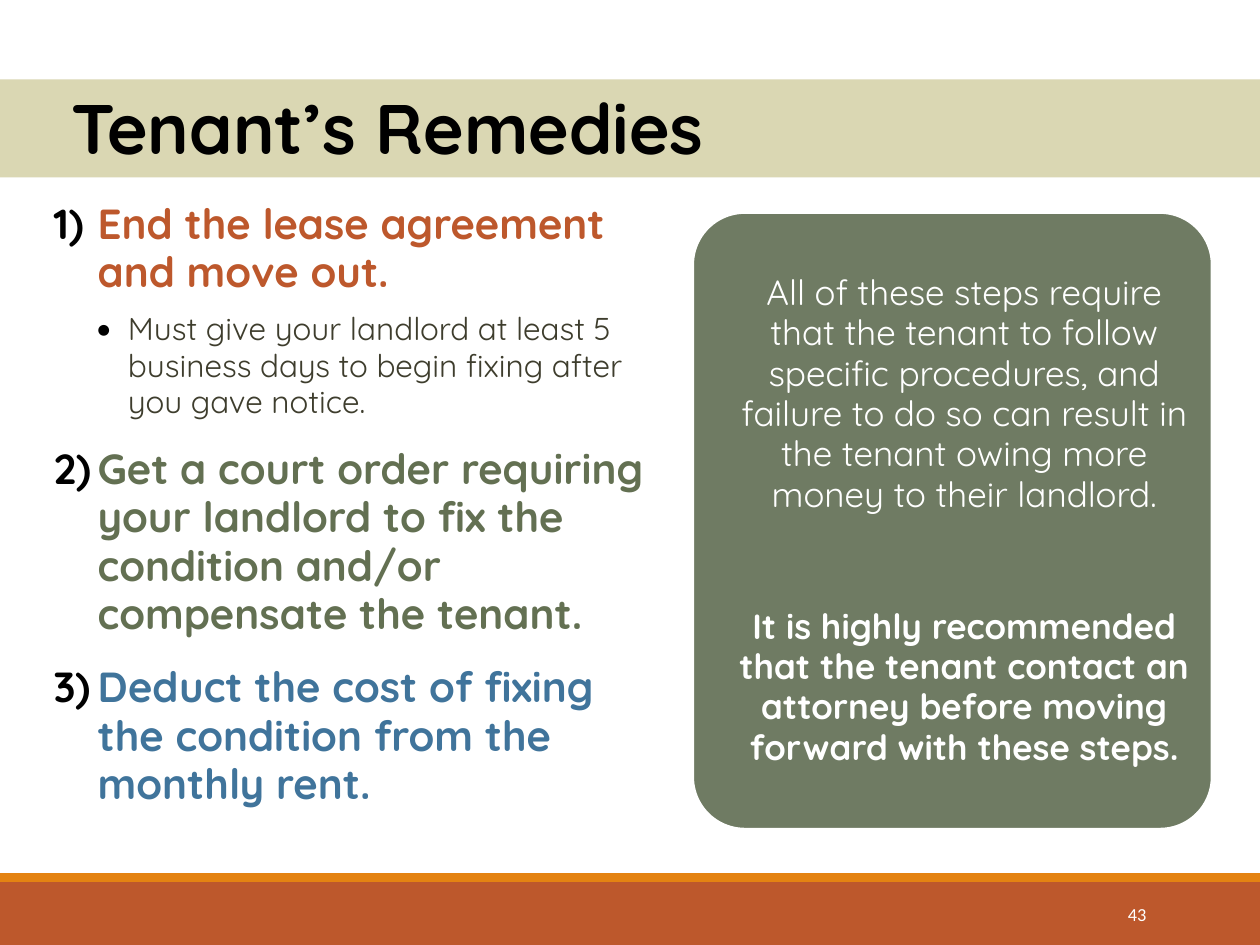
from lxml import etree
from pptx import Presentation
from pptx.dml.color import RGBColor
from pptx.enum.shapes import MSO_SHAPE
from pptx.enum.text import MSO_ANCHOR, PP_ALIGN
from pptx.oxml.ns import qn
from pptx.util import Cm, Pt

RECT, ROUNDED = MSO_SHAPE.RECTANGLE, MSO_SHAPE.ROUNDED_RECTANGLE
TOP, MIDDLE, BOTTOM = MSO_ANCHOR.TOP, MSO_ANCHOR.MIDDLE, MSO_ANCHOR.BOTTOM
LEFT, CENTER, RIGHT = PP_ALIGN.LEFT, PP_ALIGN.CENTER, PP_ALIGN.RIGHT

COLORS = {
    "black": "000000", "white": "FFFFFF", "sand": "DAD7B3", "rust": "BD582C",
    "orange": "E48312", "olive": "637052", "blue": "40749B",
    "sage": "6F7B63", "ink": "3E3D2D",
}
FONT = "Quicksand"
LINE_SPACING = 0.96

REMEDIES = [
    ("End the lease agreement and move out.", "rust",
     ["Must give your landlord at least 5 business days to begin fixing after you gave notice."]),
    ("Get a court order requiring your landlord to fix the condition and/or "
     "compensate the tenant.", "olive", []),
    ("Deduct the cost of fixing the condition from the monthly rent.", "blue", []),
]
ADVICE = [
    ("All of these steps require that the tenant to follow specific procedures, and "
     "failure to do so can result in the tenant owing more money to their landlord.", False, 0),
    ("It is highly recommended that the tenant contact an attorney before moving "
     "forward with these steps.", True, 52.4),
]


def rgb(name):
    return RGBColor.from_string(COLORS[name])


def add_block(s, kind, box, fill):
    sp = s.shapes.add_shape(kind, *(Cm(v) for v in box))
    sp.shadow.inherit = False
    sp.fill.solid()
    sp.fill.fore_color.rgb = rgb(fill)
    sp.line.fill.background()
    return sp


def set_frame(sp, anchor, left=0.25, top=0.13, right=0.25, bottom=0.13):
    tf = sp.text_frame
    formats = {"word_wrap": True, "vertical_anchor": anchor,
               "margin_left": Cm(left), "margin_top": Cm(top),
               "margin_right": Cm(right), "margin_bottom": Cm(bottom)}
    for name, value in formats.items():
        setattr(tf, name, value)
    return tf


def add_text(tf, text, size, color, bold=False, align=LEFT, before=0, font=FONT):
    """Write into the empty first paragraph, or else into a new one."""
    p = tf.paragraphs[0]
    if p.runs:
        p = tf.add_paragraph()
    p.alignment, p.line_spacing, p.space_before = align, LINE_SPACING, Pt(before)
    r = p.add_run()
    r.text = text
    for name, value in {"name": font, "size": Pt(size), "bold": bold}.items():
        setattr(r.font, name, value)
    r.font.color.rgb = rgb(color)
    return p


def set_bullet(p, margin, hanging, tag, size=100, **attributes):
    pPr = p._p.get_or_add_pPr()
    pPr.set("marL", str(Cm(margin)))
    pPr.set("indent", str(-Cm(hanging)))
    color = etree.SubElement(pPr, qn("a:buClr"))
    etree.SubElement(color, qn("a:srgbClr"), val=COLORS["black"])
    etree.SubElement(pPr, qn("a:buSzPct"), val=str(size * 1000))
    etree.SubElement(pPr, qn("a:buFont"), typeface=FONT)
    etree.SubElement(pPr, qn(tag), **attributes)


def add_footer(s, x, y, w, h, number):
    stripe = 0.18
    add_block(s, RECT, (x, y + stripe, w, h - stripe), "rust")
    add_block(s, RECT, (x, y, w, stripe), "orange")
    sp = s.shapes.add_textbox(Cm(x + 20.62), Cm(y + 0.33), Cm(2.74), Cm(1.02))
    add_text(set_frame(sp, MIDDLE), number, 10.5, "white", align=RIGHT, font="Calibri")


def add_title(s, x, y, w, h, text):
    sp = add_block(s, RECT, (x, y, w, h), "sand")
    add_text(set_frame(sp, BOTTOM, left=1.45), text, 40, "black", bold=True)


def add_remedies(s, x, y, w, h):
    tf = set_frame(s.shapes.add_textbox(Cm(x), Cm(y), Cm(w), Cm(h)), TOP)
    for number, (heading, color, details) in enumerate(REMEDIES, 1):
        p = add_text(tf, heading, 24, color, bold=True, before=14.2)
        set_bullet(p, 1.19, 0.89, "a:buAutoNum", type="arabicParenR", startAt=str(number))
        for detail in details:
            p = add_text(tf, detail, 18, "ink", before=8.5)
            p.level = 1
            set_bullet(p, 1.8, 0.61, "a:buChar", size=45, char="●")


def add_advice(s, x, y, w, h):
    sp = add_block(s, ROUNDED, (x, y, w, h), "sage")
    sp.adjustments[0] = 0.1
    sp.line.color.rgb = rgb("white")
    sp.line.width = Pt(1.25)
    tf = set_frame(sp, MIDDLE, left=0.58, top=0.25, right=0.1, bottom=0.25)
    for text, bold, before in ADVICE:
        add_text(tf, text, 20, "white", bold=bold, align=CENTER, before=before)


def main():
    prs = Presentation()
    prs.slide_width, prs.slide_height = Cm(25.4), Cm(19.05)
    s = prs.slides.add_slide(prs.slide_layouts[6])
    add_footer(s, 0, 17.6, 25.4, 1.45, "43")
    add_title(s, 0, 1.6, 25.4, 1.98, "Tenant’s Remedies")
    add_remedies(s, 0.53, 3.91, 13.03, 12.8)
    add_advice(s, 13.97, 4.29, 10.46, 12.42)
    prs.save("out.pptx")


if __name__ == "__main__":
    main()
